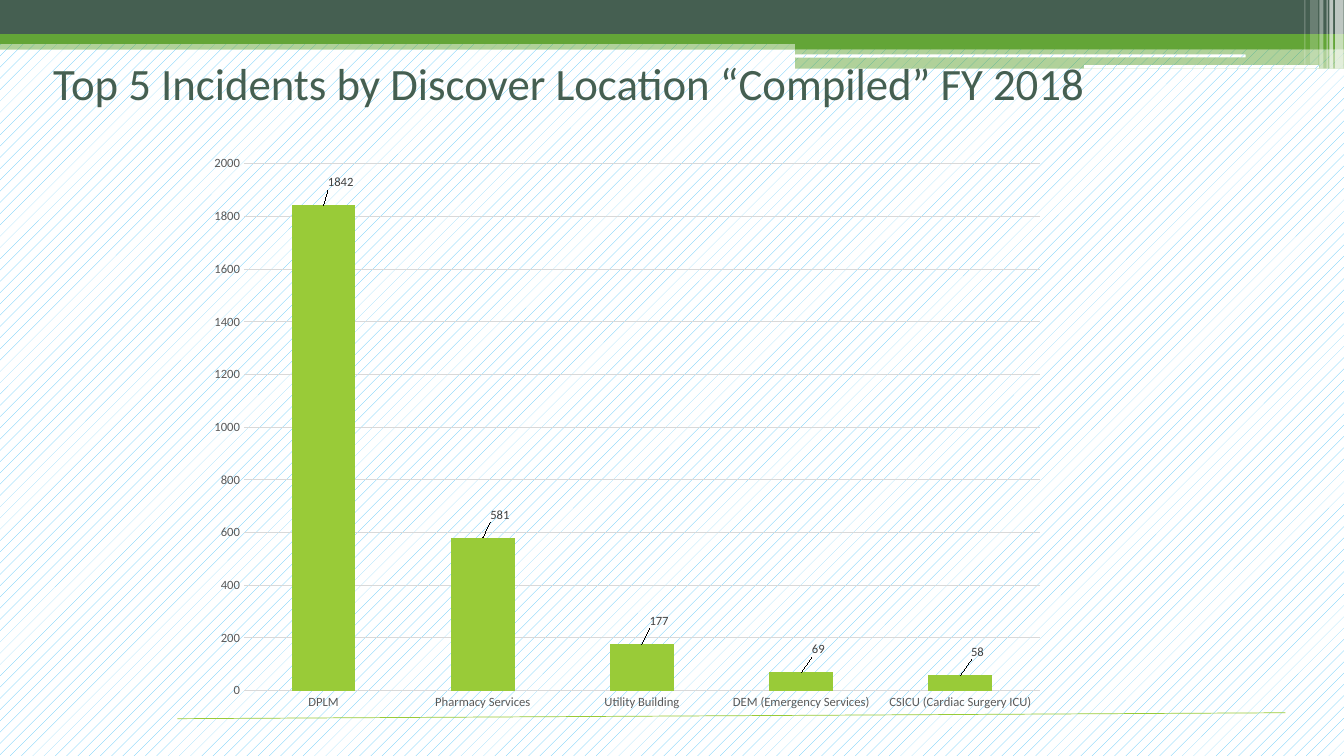
from dataclasses import dataclass

from lxml.etree import SubElement
from pptx import Presentation
from pptx.chart.chart import Chart
from pptx.chart.data import CategoryChartData
from pptx.dml.color import RGBColor
from pptx.dml.fill import FillFormat
from pptx.enum.chart import XL_CHART_TYPE, XL_LABEL_POSITION, XL_TICK_MARK
from pptx.enum.dml import MSO_PATTERN
from pptx.enum.shapes import MSO_CONNECTOR, MSO_SHAPE
from pptx.enum.text import MSO_ANCHOR
from pptx.oxml import parse_xml
from pptx.oxml.ns import nsdecls, qn
from pptx.oxml.xmlchemy import BaseOxmlElement
from pptx.slide import Slide
from pptx.text.text import Font
from pptx.util import Cm, Pt


@dataclass(frozen=True)
class Theme:
    """Colours, typeface and type sizes of the slide."""

    dark: str = "455F51"
    green: str = "63A537"
    lime: str = "99CB38"
    sky: str = "51C3F9"
    white: str = "FFFFFF"
    grid: str = "D9D9D9"
    axis_text: str = "595959"
    label_text: str = "404040"
    typeface: str = "Calibri"
    title_size: float = 32
    chart_size: float = 9


@dataclass(frozen=True)
class Band:
    """A rectangle in centimetres, with its colour and opacity in percent."""

    left: float
    top: float
    width: float
    height: float
    color: str
    opacity: int = 100


@dataclass(frozen=True)
class Slot:
    """A rounded slot in centimetres that shows the page pattern."""

    left: float
    top: float
    width: float
    height: float


THEME = Theme()
PAGE_WIDTH, PAGE_HEIGHT = 33.87, 19.05
STEP_LEFT, STEP_WIDTH = 20.04, 13.83

HEADER_BANDS = [
    Band(0, 1.02, PAGE_WIDTH, 0.23, THEME.green, 50),
    Band(0, 0, PAGE_WIDTH, 0.86, THEME.dark),
    Band(0, 0.86, PAGE_WIDTH, 0.25, THEME.green),
    Band(STEP_LEFT, 0.99, STEP_WIDTH, 0.25, THEME.green),
    Band(STEP_LEFT, 1.22, STEP_WIDTH, 0.51, THEME.green, 50),
]
SLOTS = [Slot(STEP_LEFT, 1.37, 11.35, 0.08), Slot(27.31, 1.63, 5.93, 0.1)]
EDGE_STRIPES = [
    Band(33.65, 0, 0.21, 1.73, THEME.white, 65),
    Band(33.5, 0, 0.1, 1.73, THEME.white, 65),
    Band(33.43, 0, 0.03, 1.73, THEME.white, 60),
    Band(33.25, 0, 0.1, 1.73, THEME.white, 40),
    Band(33.02, 0, 0.2, 1.63, THEME.white, 20),
    Band(32.87, 0, 0.03, 1.63, THEME.white, 30),
]
INCIDENTS = {
    "DPLM": 1842,
    "Pharmacy Services": 581,
    "Utility Building": 177,
    "DEM (Emergency Services)": 69,
    "CSICU (Cardiac Surgery ICU)": 58,
}


def rgb(color: str) -> RGBColor:
    """Turn a hex colour into an RGBColor."""
    return RGBColor.from_string(color)


def set_pattern(fill: FillFormat) -> None:
    """Give a fill the dotted page pattern."""
    fill.patterned()
    fill.pattern = MSO_PATTERN.PERCENT_10
    fill.fore_color.rgb = rgb(THEME.sky)
    fill.back_color.rgb = rgb(THEME.white)


def set_font(font: Font, size: float, color: str) -> None:
    """Apply the typeface with a size and a colour."""
    font.name = THEME.typeface
    font.size = Pt(size)
    font.color.rgb = rgb(color)


def add_band(page: Slide, band: Band) -> None:
    """Draw one plain band."""
    shape = page.shapes.add_shape(
        MSO_SHAPE.RECTANGLE, Cm(band.left), Cm(band.top), Cm(band.width), Cm(band.height)
    )
    shape.shadow.inherit = False
    shape.line.fill.background()
    shape.fill.solid()
    shape.fill.fore_color.rgb = rgb(band.color)
    if band.opacity < 100:
        color = shape.element.spPr.find(qn("a:solidFill")).find(qn("a:srgbClr"))
        SubElement(color, qn("a:alpha"), val=str(band.opacity * 1000))


def add_slot(page: Slide, slot: Slot) -> None:
    """Draw one patterned slot."""
    shape = page.shapes.add_shape(
        MSO_SHAPE.ROUNDED_RECTANGLE, Cm(slot.left), Cm(slot.top), Cm(slot.width), Cm(slot.height)
    )
    shape.shadow.inherit = False
    shape.line.fill.background()
    set_pattern(shape.fill)


def add_footer_line(page: Slide) -> None:
    """Draw the slightly rising line at the foot."""
    line = page.shapes.add_connector(
        MSO_CONNECTOR.STRAIGHT, Cm(4.47), Cm(18.11), Cm(32.39), Cm(17.96)
    )
    line.line.color.rgb = rgb(THEME.lime)
    line.line.width = Pt(0.5)
    SubElement(line.element.spPr, qn("a:effectLst"))


def set_layout(parent: BaseOxmlElement, index: int, target: str, **fractions: float) -> None:
    """Place a chart part by fractions of the chart area."""
    for layout in parent.findall(qn("c:layout")):
        parent.remove(layout)
    values = "".join(f'<c:{key} val="{value}"/>' for key, value in fractions.items())
    parent.insert(index, parse_xml(
        f'<c:layout {nsdecls("c")}><c:manualLayout>{target}{values}</c:manualLayout></c:layout>'
    ))


def style_axes(chart: Chart) -> None:
    """Style both axes and the gridlines."""
    for axis in (chart.category_axis, chart.value_axis):
        axis.major_tick_mark = axis.minor_tick_mark = XL_TICK_MARK.NONE
        axis.format.line.fill.background()
        set_font(axis.tick_labels.font, THEME.chart_size, THEME.axis_text)
    scale = chart.value_axis
    scale.minimum_scale, scale.maximum_scale, scale.major_unit = 0, 2000, 200
    scale.has_major_gridlines = True
    scale.major_gridlines.format.line.color.rgb = rgb(THEME.grid)
    scale.major_gridlines.format.line.width = Pt(0.75)


def add_incident_chart(page: Slide) -> None:
    """Add the column chart of incidents by location."""
    data = CategoryChartData()
    data.categories = list(INCIDENTS)
    data.add_series("Series 1", list(INCIDENTS.values()))
    chart = page.shapes.add_chart(
        XL_CHART_TYPE.COLUMN_CLUSTERED, Cm(4.98), Cm(3.68), Cm(21.64), Cm(14.48), data
    ).chart
    chart.has_legend = chart.has_title = False
    set_font(chart.font, THEME.chart_size, THEME.label_text)
    style_axes(chart)
    plot = chart.plots[0]
    plot.gap_width = 150
    plot.vary_by_categories = False
    series = plot.series[0]
    series.format.fill.solid()
    series.format.fill.fore_color.rgb = rgb(THEME.lime)
    series.data_labels.show_value = True
    set_font(series.data_labels.font, THEME.chart_size, THEME.label_text)
    for index in range(len(INCIDENTS)):
        label = series.points[index].data_label
        set_font(label.font, THEME.chart_size, THEME.label_text)
        label.position = XL_LABEL_POSITION.OUTSIDE_END
    for label_element in chart.element.iter(qn("c:dLbl")):
        set_layout(label_element, 1, "", x=0.02, y=-0.02)
    plot_area = chart.element.find(qn("c:chart")).find(qn("c:plotArea"))
    inner = '<c:layoutTarget val="inner"/><c:xMode val="edge"/><c:yMode val="edge"/>'
    set_layout(plot_area, 0, inner, x=0.054, y=0.031, w=0.927, h=0.917)


def add_title(page: Slide) -> None:
    """Add the slide title."""
    box = page.shapes.add_textbox(Cm(1.09), Cm(1.27), Cm(28.88), Cm(3.2))
    box.text_frame.word_wrap = True
    box.text_frame.vertical_anchor = MSO_ANCHOR.TOP
    span = box.text_frame.paragraphs[0].add_run()
    span.text = "Top 5 Incidents by Discover Location “Compiled” FY 2018"
    set_font(span.font, THEME.title_size, THEME.dark)


def main() -> None:
    """Build the deck and save it."""
    deck = Presentation()
    deck.slide_width, deck.slide_height = Cm(PAGE_WIDTH), Cm(PAGE_HEIGHT)
    page = deck.slides.add_slide(deck.slide_layouts[6])
    set_pattern(page.background.fill)
    for band in HEADER_BANDS:
        add_band(page, band)
    for slot in SLOTS:
        add_slot(page, slot)
    for stripe in EDGE_STRIPES:
        add_band(page, stripe)
    add_footer_line(page)
    add_incident_chart(page)
    add_title(page)
    deck.save("out.pptx")


if __name__ == "__main__":
    main()
